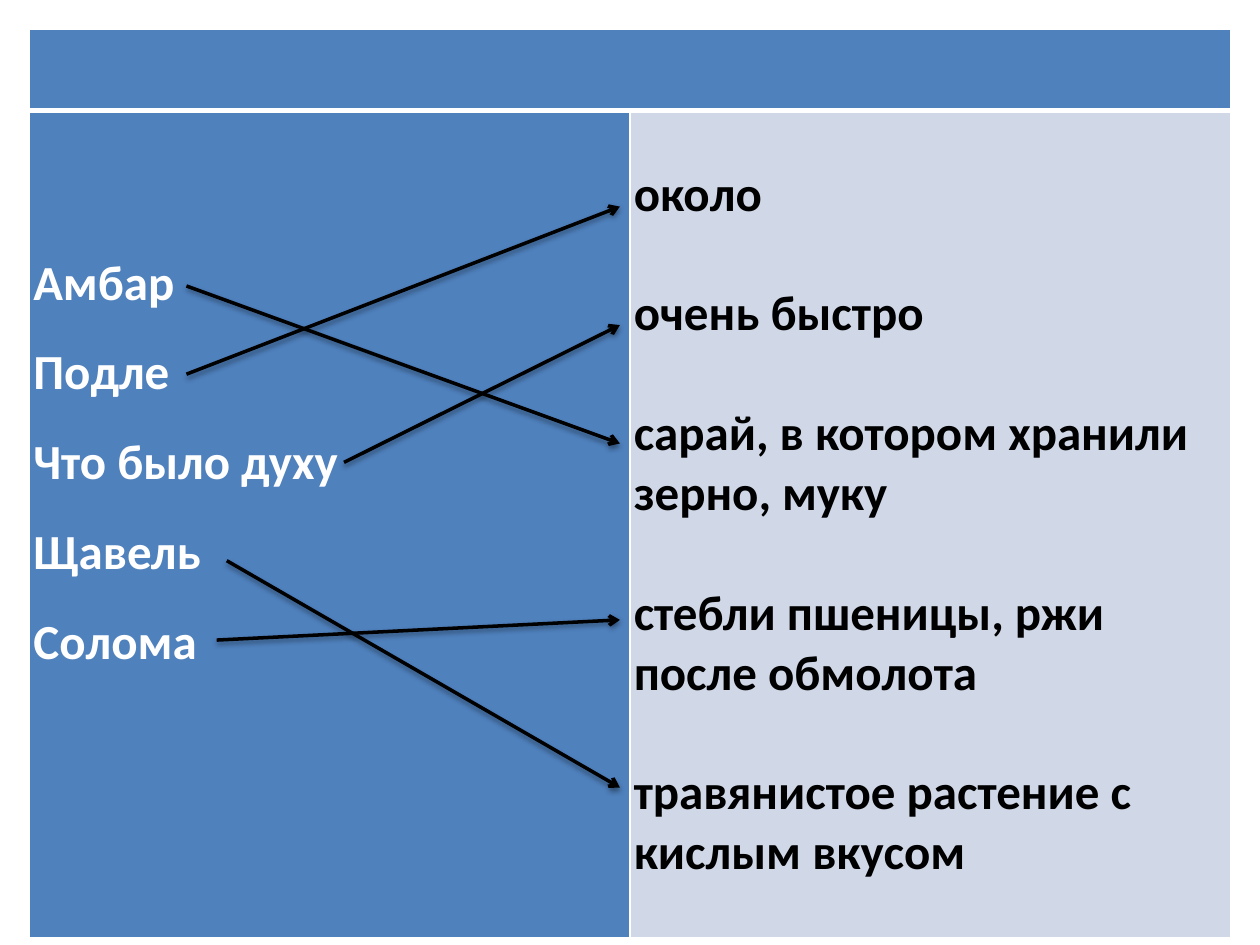
import pptx
import pptx.dml.color
import pptx.enum.shapes
import pptx.oxml
import pptx.oxml.ns
import pptx.util

BLUE, PALE, WHITE, BLACK = "4F81BD", "D0D8E8", "FFFFFF", "000000"
NS = pptx.oxml.ns.nsdecls("a")


def rgb(value):
    return pptx.dml.color.RGBColor.from_string(value)


class Deck:
    """Holds the style and the current slide; the grid is 100 x 75 units."""

    cols, rows = 100, 75
    font, size = "Calibri", 28
    cell_margin = 0.3

    def __init__(self, width, height):
        self.prs = pptx.Presentation()
        self.prs.slide_width = pptx.util.Inches(width)
        self.prs.slide_height = pptx.util.Inches(height)
        self.s = self.prs.slides.add_slide(self.prs.slide_layouts[6])

    def x(self, units):
        return round(self.prs.slide_width * units / self.cols)

    def y(self, units):
        return round(self.prs.slide_height * units / self.rows)

    def table(self, left, top, widths, heights):
        table = self.s.shapes.add_table(
            len(heights), len(widths), self.x(left), self.y(top),
            self.x(sum(widths)), self.y(sum(heights))).table
        for column, width in zip(table.columns, widths):
            column.width = self.x(width)
        for row, height in zip(table.rows, heights):
            row.height = self.y(height)
        return table

    def cell(self, cell, fill, **border_widths):
        tcPr = cell._tc.get_or_add_tcPr()
        for side in "LRTB":
            width = pptx.util.Pt(border_widths.get(side, 1))
            tcPr.append(pptx.oxml.parse_xml(
                f'<a:ln{side} {NS} w="{width}"><a:solidFill>'
                f'<a:srgbClr val="{WHITE}"/></a:solidFill></a:ln{side}>'))
        cell.fill.solid()
        cell.fill.fore_color.rgb = rgb(fill)

    def words(self, cell, lines, color, top, spacing=1.0, gap=0):
        cell.margin_left = cell.margin_right = self.x(self.cell_margin)
        cell.margin_top, cell.margin_bottom = self.y(top), self.y(self.cell_margin)
        tf = cell.text_frame
        tf.text = "\n".join(lines)
        for i, p in enumerate(tf.paragraphs):
            p.line_spacing = spacing
            p.space_before = pptx.util.Pt(gap if i else 0)
            font = p.runs[0].font
            font.name, font.size, font.bold = self.font, pptx.util.Pt(self.size), True
            font.color.rgb = rgb(color)

    def arrow(self, x1, y1, x2, y2):
        sp = self.s.shapes.add_connector(
            pptx.enum.shapes.MSO_CONNECTOR.STRAIGHT,
            self.x(x1), self.y(y1), self.x(x2), self.y(y2))
        sp.line.color.rgb = rgb(BLACK)
        sp.line.width = pptx.util.Pt(2)
        sp.line._get_or_add_ln().append(
            pptx.oxml.parse_xml(f'<a:tailEnd {NS} type="arrow"/>'))
        # Soft shadow straight below the line
        blur, dist = pptx.util.Pt(3.1), pptx.util.Pt(1.6)
        sp._element.spPr.append(pptx.oxml.parse_xml(
            f'<a:effectLst {NS}><a:outerShdw blurRad="{blur}" dist="{dist}" '
            f'dir="5400000" rotWithShape="0"><a:srgbClr val="{BLACK}">'
            '<a:alpha val="38000"/></a:srgbClr></a:outerShdw></a:effectLst>'))


def main():
    deck = Deck(10, 7.5)

    # Table: a merged heading band over words and meanings
    table = deck.table(2.35, 2.35, [47.65, 47.65], [6.4, 65.7])
    for col, fill in enumerate([BLUE, PALE]):
        deck.cell(table.cell(0, col), BLUE, B=3)
        deck.cell(table.cell(1, col), fill, T=3)
    table.cell(0, 0).merge(table.cell(0, 1))

    deck.words(table.cell(1, 0),
               ["Амбар", "Подле", "Что было духу", "Щавель", "Солома"],
               WHITE, top=9, spacing=1.5)
    deck.words(table.cell(1, 1),
               ["около", "очень быстро", "сарай, в котором хранили зерно, муку",
                "стебли пшеницы, ржи после обмолота",
                "травянистое растение с кислым вкусом"],
               BLACK, top=4.3, gap=34.2)

    # Arrows from each word to its meaning
    meaning_x = 49.2
    for x, y, meaning_y in [(14.8, 22.7, 35.2), (18, 44.5, 62.5), (17.2, 50.8, 49.2),
                            (14.8, 29.7, 16.4), (27.3, 36.7, 25.8)]:
        deck.arrow(x, y, meaning_x, meaning_y)

    deck.prs.save("out.pptx")


if __name__ == "__main__":
    main()
